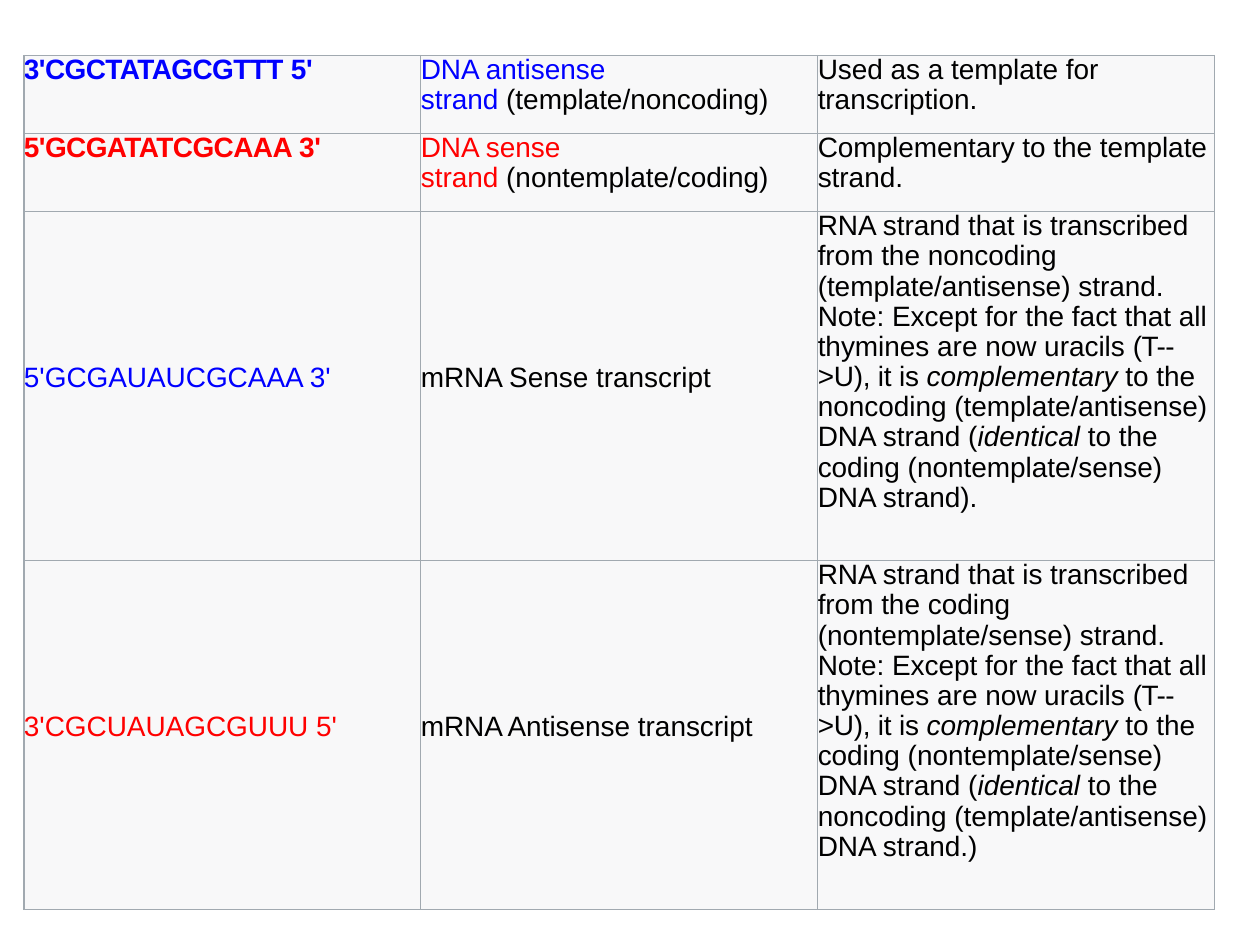
from lxml import etree
from pptx import Presentation
from pptx.dml.color import RGBColor
from pptx.enum.text import MSO_ANCHOR
from pptx.oxml.ns import qn
from pptx.util import Inches, Pt

BLACK = RGBColor(0x00, 0x00, 0x00)
BLUE = RGBColor(0x00, 0x00, 0xFF)
RED = RGBColor(0xFF, 0x00, 0x00)
CELL_FILL = RGBColor(0xF8, 0xF8, 0xF9)
BORDER = RGBColor(0xA1, 0xA9, 0xB0)

COL_WIDTH = 3.15
ROW_HEIGHTS = [0.62, 0.62, 2.77, 2.77]
ITALIC = {"italic": True}
TIGHT = {"spacing": -0.3}
SLIGHTLY_TIGHT = {"spacing": -0.1}


def dna_row(sequence, end, color, strand, kind, use):
    """Cells of a DNA strand; each cell is paragraphs of (text, format) runs."""
    bold = {"bold": True, "color": color}
    return [
        [[(sequence + " ", bold | TIGHT), (end, bold | SLIGHTLY_TIGHT)]],
        [[(strand, {"color": color})],
         [("strand ", {"color": color}), (kind, {})]],
        [[(use, {})]],
    ]


def mrna_row(sequence, color, name, template, other, ending):
    """Cells of an mRNA transcript, in the same form as dna_row."""
    return [
        [[(sequence, {"color": color})]],
        [[(name, {})]],
        [[(f"RNA strand that is transcribed from the {template} strand.", {})],
         [("Note: Except for the fact that all thymines are now uracils ", {}),
          ("(T--", TIGHT)],
         [(">U), it is ", SLIGHTLY_TIGHT), ("complementary ", ITALIC),
          (f"to the {template} DNA strand (", {}), ("identical ", ITALIC),
          (f"to the {other} DNA strand{ending}", {})]],
    ]


ROWS = [
    dna_row("3'CGCTATAGCGTTT", "5'", BLUE, "DNA antisense",
            "(template/noncoding)", "Used as a template for transcription."),
    dna_row("5'GCGATATCGCAAA", "3'", RED, "DNA sense",
            "(nontemplate/coding)", "Complementary to the template strand."),
    mrna_row("5'GCGAUAUCGCAAA 3'", BLUE, "mRNA Sense transcript",
             "noncoding (template/antisense)",
             "coding (nontemplate/sense)", ")."),
    mrna_row("3'CGCUAUAGCGUUU 5'", RED, "mRNA Antisense transcript",
             "coding (nontemplate/sense)",
             "noncoding (template/antisense)", ".)"),
]


def add_run(p, text, color=BLACK, bold=False, italic=False, spacing=0):
    r = p.add_run()
    r.text = text
    font = {"name": "Arial", "size": Pt(16), "bold": bold, "italic": italic}
    for name, value in font.items():
        setattr(r.font, name, value)
    r.font.color.rgb = color
    if spacing:
        r.font._element.set("spc", str(round(spacing * 100)))


def add_borders(cell):
    tc_pr = cell._tc.get_or_add_tcPr()
    for side in ("lnL", "lnR", "lnT", "lnB"):
        line = etree.SubElement(tc_pr, qn(f"a:{side}"), w=str(Pt(0.75)))
        fill = etree.SubElement(line, qn("a:solidFill"))
        etree.SubElement(fill, qn("a:srgbClr"), val=str(BORDER))


def fill_cell(cell, paragraphs, centred):
    add_borders(cell)
    cell.fill.solid()
    cell.fill.fore_color.rgb = CELL_FILL
    for side in ("left", "right", "top", "bottom"):
        setattr(cell, f"margin_{side}", 0)
    if centred:
        cell.vertical_anchor = MSO_ANCHOR.MIDDLE
        cell.margin_bottom = Inches(0.12)
    tf = cell.text_frame
    for i, runs in enumerate(paragraphs):
        p = tf.add_paragraph() if i else tf.paragraphs[0]
        p.line_spacing = 0.97
        for text, style in runs:
            add_run(p, text, **style)


def add_strand_table(slide, left, top):
    table = slide.shapes.add_table(
        len(ROWS), 3, Inches(left), Inches(top),
        Inches(3 * COL_WIDTH), Inches(sum(ROW_HEIGHTS))).table
    table.first_row = table.horz_banding = False
    for column in table.columns:
        column.width = Inches(COL_WIDTH)
    for i, (cells, height) in enumerate(zip(ROWS, ROW_HEIGHTS)):
        table.rows[i].height = Inches(height)
        for j, paragraphs in enumerate(cells):
            is_mrna_label = i >= 2 and j < 2
            fill_cell(table.cell(i, j), paragraphs, is_mrna_label)


def main():
    prs = Presentation()
    prs.slide_width, prs.slide_height = Inches(10), Inches(7.5)
    slide = prs.slides.add_slide(prs.slide_layouts[6])
    add_strand_table(slide, 0.19, 0.44)
    prs.save("out.pptx")


if __name__ == "__main__":
    main()
